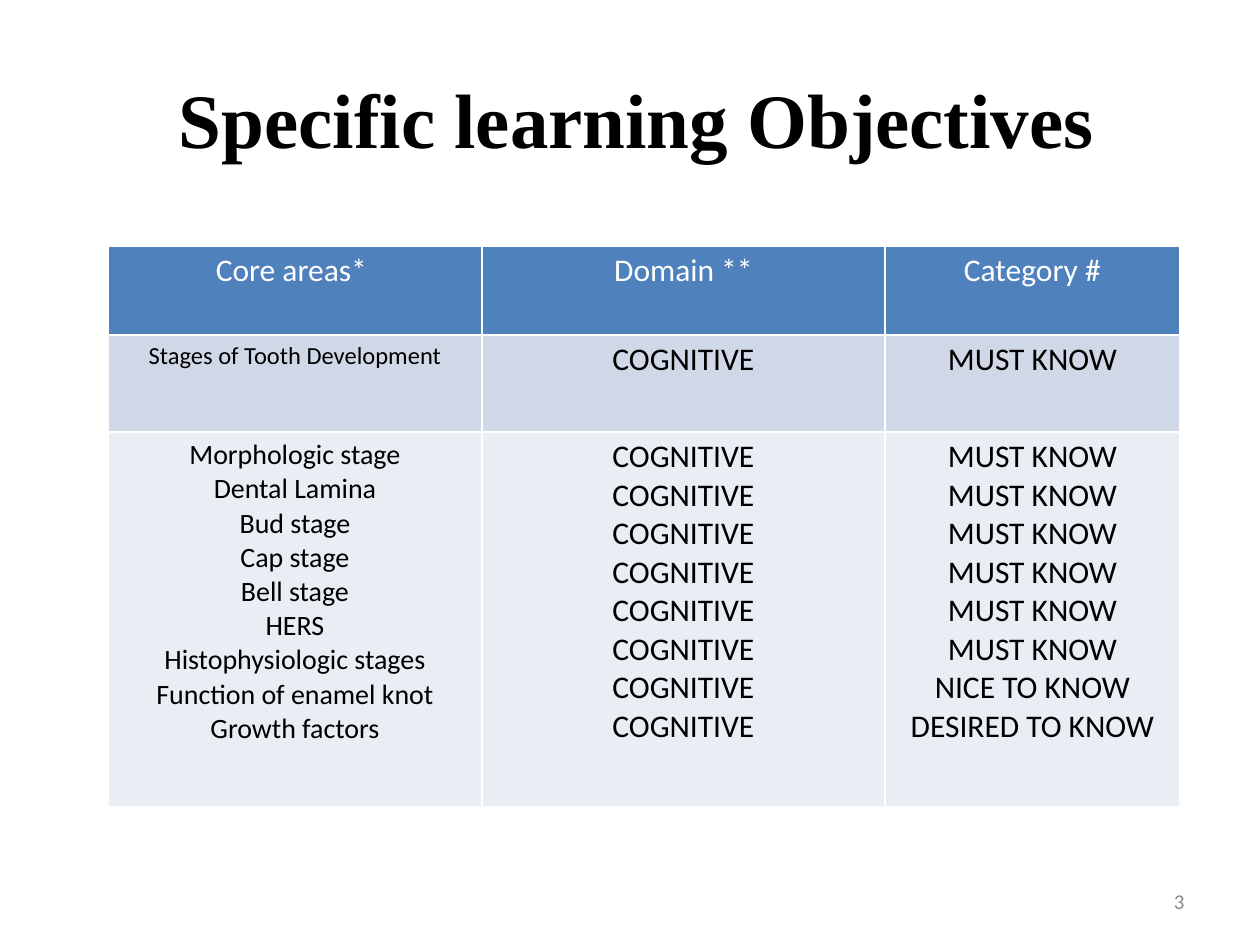
import pptx
import pptx.util
import pptx.dml.color
import pptx.enum.text
import pptx.oxml
import pptx.oxml.ns

RGB = pptx.dml.color.RGBColor
ALIGN = pptx.enum.text.PP_ALIGN
Pt = pptx.util.Pt

WHITE = RGB(0xFF, 0xFF, 0xFF)
BLACK = RGB(0, 0, 0)
GREY = RGB(0x8C, 0x8C, 0x8C)
BLUE = RGB(0x4F, 0x81, 0xBD)
MID = RGB(0xD0, 0xD8, 0xE8)
PALE = RGB(0xE9, 0xED, 0xF4)

SCALE = pptx.util.Inches(1) / 126


def px(*sizes):
    """Turn pixel lengths into EMU."""
    return [round(size * SCALE) for size in sizes]


def write(frame, lines, size, color, align=ALIGN.CENTER, face="Calibri", bold=False):
    frame.text = "\n".join(lines)
    frame.word_wrap = True
    for para in frame.paragraphs:
        para.alignment = align
        para.font.size = Pt(size)
        para.font.name = face
        para.font.bold = bold
        para.font.color.rgb = color


deck = pptx.Presentation()
deck.slide_width, deck.slide_height = px(1260, 945)
slide = deck.slides.add_slide(deck.slide_layouts[6])

# Title and page number
title = slide.shapes.add_textbox(*px(158, 42, 958, 152)).text_frame
write(title, ["Specific learning Objectives "], 44, BLACK, face="Times New Roman", bold=True)
page = slide.shapes.add_textbox(*px(903, 876, 294, 50)).text_frame
write(page, ["3"], 12, GREY, ALIGN.RIGHT)
for frame in (title, page):
    frame.vertical_anchor = pptx.enum.text.MSO_ANCHOR.MIDDLE

# Table: each row has its fill, text colour, font sizes and cells
stages = [
    "Morphologic stage", "Dental Lamina", "Bud stage", "Cap stage", "Bell stage",
    "HERS", "Histophysiologic stages", "Function of enamel knot", "Growth factors",
]
needs = ["MUST KNOW"] * 6 + ["NICE TO KNOW", "DESIRED TO KNOW"]
rows = [
    (BLUE, WHITE, (18, 18, 18), (["Core areas* "], ["Domain **"], ["Category #"])),
    (MID, BLACK, (14, 18, 18), (["Stages of Tooth Development"], ["COGNITIVE"], ["MUST KNOW"])),
    (PALE, BLACK, (16, 18, 18), (stages, ["COGNITIVE"] * 8, needs)),
]
wide = px(374, 403, 295)
high = px(89, 97, 375)
left, top = px(108, 246)
table = slide.shapes.add_table(3, 3, left, top, sum(wide), sum(high)).table
for col, width in zip(table.columns, wide):
    col.width = width
for row, height in zip(table.rows, high):
    row.height = height

for r, (fill, color, sizes, texts) in enumerate(rows):
    for c, (size, lines) in enumerate(zip(sizes, texts)):
        cell = table.cell(r, c)
        write(cell.text_frame, lines, size, color)
        cell.margin_left, cell.margin_right, cell.margin_top, cell.margin_bottom = px(9, 9, 6, 6)
        props = cell._tc.get_or_add_tcPr()
        for side in "LRTB":
            props.append(pptx.oxml.parse_xml(
                f'<a:ln{side} {pptx.oxml.ns.nsdecls("a")} w="{Pt(1)}">'
                f'<a:solidFill><a:srgbClr val="{WHITE}"/></a:solidFill></a:ln{side}>'))
        cell.fill.solid()
        cell.fill.fore_color.rgb = fill

deck.save("out.pptx")
